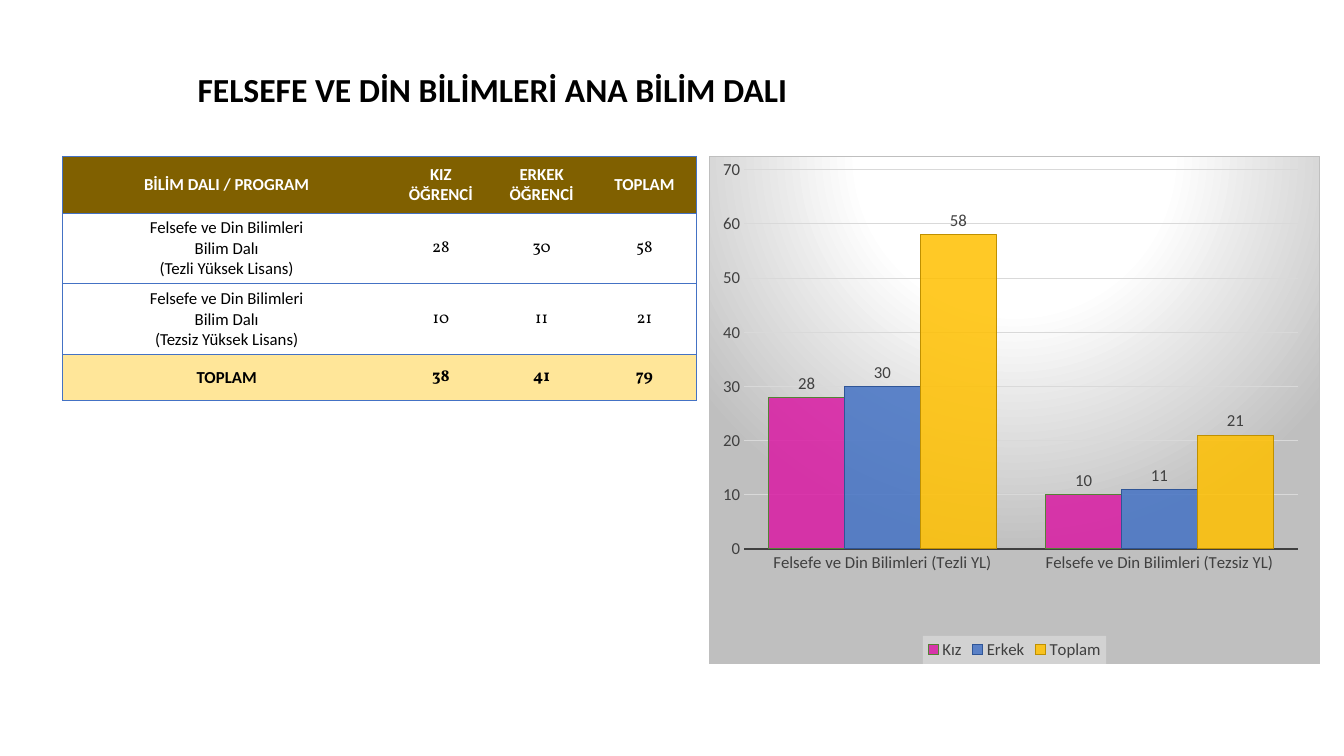
from lxml import etree
from pptx import Presentation
from pptx.chart.data import CategoryChartData
from pptx.dml.color import RGBColor
from pptx.enum.chart import XL_CHART_TYPE, XL_LABEL_POSITION, XL_LEGEND_POSITION, XL_TICK_MARK
from pptx.enum.text import MSO_ANCHOR, PP_ALIGN
from pptx.oxml import parse_xml
from pptx.oxml.ns import nsdecls, qn
from pptx.util import Pt

COLUMN = XL_CHART_TYPE.COLUMN_CLUSTERED
OUTSIDE = XL_LABEL_POSITION.OUTSIDE_END
BOTTOM = XL_LEGEND_POSITION.BOTTOM
NO_TICK = XL_TICK_MARK.NONE
MIDDLE = MSO_ANCHOR.MIDDLE
CENTER = PP_ALIGN.CENTER

theme = {
    "font": "Calibri", "digit": "Vollkorn",
    "title": Pt(24), "body": Pt(12),
    "ink": "000000", "white": "FFFFFF", "gray": "404040",
    "grid": "D9D9D9", "shade": "BFBFBF", "key": "F2F2F2",
    "head": "806000", "sum": "FFE699", "rule": "4472C4",
}


def put(item, **vals):
    for name, val in vals.items():
        setattr(item, name, val)


def style(font, color, size=theme["body"], name=theme["font"], bold=False):
    put(font, size=size, name=name, bold=bold)
    font.color.rgb = RGBColor.from_string(color)


deck = Presentation()
put(deck, slide_width=Pt(960), slide_height=Pt(540))
slide = deck.slides.add_slide(deck.slide_layouts[6])

title = slide.shapes.add_textbox(Pt(134), Pt(46), Pt(574), Pt(65.5)).text_frame
title.word_wrap = True
run = title.paragraphs[0].add_run()
run.text = "FELSEFE VE DİN BİLİMLERİ ANA BİLİM DALI"
style(run.font, theme["ink"], theme["title"], bold=True)

rows = [
    ["BİLİM DALI / PROGRAM", "KIZ ÖĞRENCİ", "ERKEK ÖĞRENCİ", "TOPLAM"],
    ["Felsefe ve Din Bilimleri\nBilim Dalı\n(Tezli Yüksek Lisans)", "28", "30", "58"],
    ["Felsefe ve Din Bilimleri\nBilim Dalı\n(Tezsiz Yüksek Lisans)", "10", "11", "21"],
    ["TOPLAM", "38", "41", "79"],
]
wide = [234.7, 71.3, 72.7, 74.2]
high = [40.5, 50.6, 50.6, 32.7]
fills = [theme["head"], None, None, theme["sum"]]
last = len(wide) - 1

frame = slide.shapes.add_table(
    len(rows), len(wide), Pt(44.6), Pt(111.6), Pt(sum(wide)), Pt(sum(high)))
table = frame.table
put(table, first_row=False, horz_banding=False)
for col, size in zip(table.columns, wide):
    col.width = Pt(size)
for row, size in zip(table.rows, high):
    row.height = Pt(size)

for r, row in enumerate(rows):
    for c, text in enumerate(row):
        cell = table.cell(r, c)
        put(cell, text=text, vertical_anchor=MIDDLE,
            margin_left=Pt(10.8), margin_right=Pt(10.8),
            margin_top=Pt(3.6), margin_bottom=Pt(3.6))
        for para in cell.text_frame.paragraphs:
            para.alignment = CENTER
            for run in para.runs:
                style(run.font, theme["ink"] if r else theme["white"],
                      name=theme["digit"] if r and c else theme["font"],
                      bold=r in (0, len(rows) - 1))
        props = cell._tc.get_or_add_tcPr()
        for side, shown in {"L": c == 0, "R": c == last, "T": True, "B": True}.items():
            edge = etree.SubElement(props, qn(f"a:ln{side}"), w=str(Pt(0.5)))
            if shown:
                paint = etree.SubElement(edge, qn("a:solidFill"))
                etree.SubElement(paint, qn("a:srgbClr"), val=theme["rule"])
            else:
                etree.SubElement(edge, qn("a:noFill"))
        if fills[r]:
            cell.fill.solid()
            cell.fill.fore_color.rgb = RGBColor.from_string(fills[r])
        else:
            cell.fill.background()

series = [
    ("Kız", (28, 10), "D91BA3", "548235"),
    ("Erkek", (30, 11), "4472C4", "2F5597"),
    ("Toplam", (58, 21), "FFC000", "BF9000"),
]
data = CategoryChartData()
data.categories = ["Felsefe ve Din Bilimleri (Tezli YL)", "Felsefe ve Din Bilimleri (Tezsiz YL)"]
for name, vals, *_ in series:
    data.add_series(name, vals)
chart = slide.shapes.add_chart(COLUMN, Pt(506.2), Pt(111.6), Pt(437), Pt(363), data).chart
put(chart, has_title=False, has_legend=True)
style(chart.font, theme["ink"], Pt(10))

put(chart.legend, position=BOTTOM, include_in_layout=False)
style(chart.legend.font, theme["gray"])
chart.legend._element.find(qn("c:txPr")).addprevious(parse_xml(
    f'<c:spPr {nsdecls("c", "a")}><a:solidFill><a:srgbClr val="{theme["key"]}">'
    '<a:alpha val="39000"/></a:srgbClr></a:solidFill></c:spPr>'))

plot = chart.plots[0]
put(plot, gap_width=65, overlap=0, vary_by_categories=False)
for bar, (name, vals, fill, line) in zip(plot.series, series):
    bar.format.fill.solid()
    bar.format.fill.fore_color.rgb = RGBColor.from_string(fill)
    tint = bar._element.xpath("./c:spPr/a:solidFill/a:srgbClr")[0]
    etree.SubElement(tint, qn("a:alpha"), val="85000")
    bar.format.line.width = Pt(0.75)
    bar.format.line.color.rgb = RGBColor.from_string(line)
    put(bar.data_labels, show_value=True, position=OUTSIDE)
    style(bar.data_labels.font, theme["gray"])

base, scale = chart.category_axis, chart.value_axis
for axis in (base, scale):
    put(axis, major_tick_mark=NO_TICK, minor_tick_mark=NO_TICK)
    style(axis.tick_labels.font, theme["gray"])
base.format.line.width = Pt(1.5)
base.format.line.color.rgb = RGBColor.from_string(theme["gray"])
put(scale, minimum_scale=0, maximum_scale=70, major_unit=10, has_major_gridlines=True)
scale.format.line.fill.background()
grid = scale.major_gridlines.format.line
grid.width = Pt(0.75)
grid.color.rgb = RGBColor.from_string(theme["grid"])

area = chart._chartSpace.chart.plotArea
for old in area.findall(qn("c:layout")):
    area.remove(old)
place = {"x": 0.057, "y": 0.026, "w": 0.907, "h": 0.747}
modes = "".join(f'<c:{key}Mode val="edge"/>' for key in "xy")
spots = "".join(f'<c:{key} val="{val}"/>' for key, val in place.items())
area.insert(0, parse_xml(
    f'<c:layout {nsdecls("c")}><c:manualLayout><c:layoutTarget val="inner"/>'
    f'{modes}{spots}</c:manualLayout></c:layout>'))

stops = "".join(
    f'<a:gs pos="{pos}000"><a:srgbClr val="{theme[name]}"/></a:gs>'
    for pos, name in [(0, "white"), (39, "white"), (100, "shade")])
chart._chartSpace.chart.addnext(parse_xml(
    f'<c:spPr {nsdecls("c", "a")}><a:gradFill><a:gsLst>{stops}</a:gsLst>'
    '<a:path path="circle"><a:fillToRect l="50000" t="-80000" r="50000" b="180000"/></a:path>'
    f'</a:gradFill><a:ln w="{Pt(0.75)}"><a:solidFill><a:srgbClr val="{theme["shade"]}"/>'
    '</a:solidFill></a:ln></c:spPr>'))

deck.save("out.pptx")
